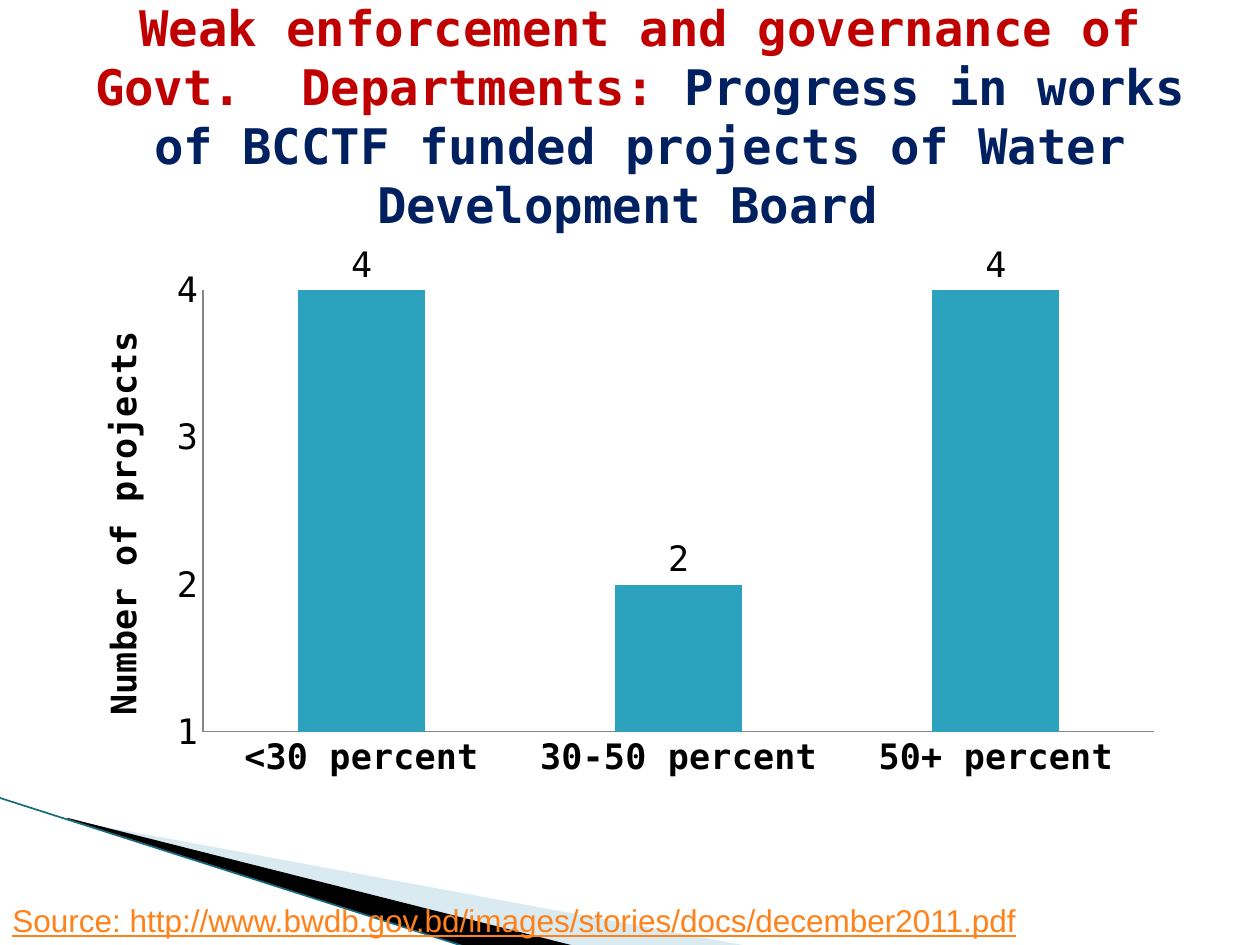
from lxml.etree import SubElement
from pptx import Presentation
from pptx.chart.data import CategoryChartData
from pptx.dml.color import RGBColor
from pptx.enum.chart import XL_CHART_TYPE, XL_LABEL_POSITION, XL_TICK_MARK
from pptx.enum.shapes import MSO_CONNECTOR
from pptx.enum.text import MSO_ANCHOR, PP_ALIGN
from pptx.oxml import parse_xml
from pptx.oxml.ns import nsdecls, qn
from pptx.util import Inches, Pt

RED = RGBColor(0xC0, 0x00, 0x00)
NAVY = RGBColor(0x00, 0x20, 0x60)
TEAL = RGBColor(0x2D, 0xA2, 0xBF)
DARK_TEAL = RGBColor(0x16, 0x69, 0x7F)
PALE_BLUE = RGBColor(0xA0, 0xCB, 0xDC)
ORANGE = RGBColor(0xFF, 0x81, 0x19)
GRAY = RGBColor(0x86, 0x86, 0x86)
BLACK = RGBColor(0, 0, 0)
MONO = "DejaVu Sans Mono"

TITLE = [
    ("Weak enforcement and governance of Govt.  Departments: ", 28, RED),
    ("Progress in works of BCCTF funded projects of Water Development Board", 28, NAVY),
    (" ", 24, NAVY),
]
PROGRESS = {"<30 percent": 4, "30-50 percent": 2, "50+ percent": 4}
AXIS_TITLE = "Number of projects"
SOURCE = "Source: http://www.bwdb.gov.bd/images/stories/docs/december2011.pdf"
# outline, fill, opacity in percent
WEDGES = [
    ([(0.55, 6.51), (5.95, 7.51), (4.56, 7.51), (0.55, 6.5)], PALE_BLUE, 40),
    ([(0.53, 6.49), (4.57, 7.51), (3.72, 7.52), (0.54, 6.5)], BLACK, 100),
]
PLOT_AREA = {"x": 0.118, "y": 0.084, "w": 0.863, "h": 0.765}


def add_wedge(slide, points, color, opacity):
    corners = [(Inches(x), Inches(y)) for x, y in points]
    builder = slide.shapes.build_freeform(*corners[0], scale=1.0)
    builder.add_line_segments(corners[1:], close=True)
    wedge = builder.convert_to_shape()
    wedge.shadow.inherit = False
    wedge.line.fill.background()
    wedge.fill.solid()
    wedge.fill.fore_color.rgb = color
    if opacity < 100:
        tint = wedge.fill._xPr.find(".//" + qn("a:srgbClr"))
        SubElement(tint, qn("a:alpha"), val=str(opacity * 1000))


def add_edge(slide):
    edge = slide.shapes.add_connector(
        MSO_CONNECTOR.STRAIGHT, Inches(-0.01), Inches(6.33), Inches(3.71), Inches(7.52))
    edge.line.color.rgb = DARK_TEAL
    edge.line.width = Pt(0.95)
    SubElement(edge._element.spPr, qn("a:effectLst"))


def fill_title(title):
    title.left, title.top, title.width, title.height = map(Inches, (0.58, 0, 9, 1.83))
    frame = title.text_frame
    frame.word_wrap = True
    frame.vertical_anchor = MSO_ANCHOR.MIDDLE
    paragraph = frame.paragraphs[0]
    paragraph.alignment = PP_ALIGN.CENTER
    paragraph.line_spacing = 1.0
    paragraph.font.name = MONO
    paragraph.font.bold = True
    for text, size, color in TITLE:
        run = paragraph.add_run()
        run.text = text
        run.font.size = Pt(size)
        run.font.color.rgb = color


def fix_plot_area(chart):
    """Pin the inner plot area to fixed fractions of the chart."""
    plot_area = chart._chartSpace.chart.plotArea
    for layout in plot_area.findall(qn("c:layout")):
        plot_area.remove(layout)
    places = "".join(f'<c:{side} val="{part}"/>' for side, part in PLOT_AREA.items())
    plot_area.insert(0, parse_xml(
        f'<c:layout {nsdecls("c")}><c:manualLayout><c:layoutTarget val="inner"/>'
        f'<c:xMode val="edge"/><c:yMode val="edge"/>{places}</c:manualLayout></c:layout>'))


def add_progress_chart(slide):
    progress = CategoryChartData()
    progress.categories = list(PROGRESS)
    progress.add_series("Series 1", list(PROGRESS.values()))
    chart = slide.shapes.add_chart(
        XL_CHART_TYPE.COLUMN_CLUSTERED,
        Inches(0.58), Inches(1.92), Inches(8.75), Inches(4.58), progress).chart
    chart.has_legend = False
    chart.has_title = False
    chart.font.name = MONO
    chart.font.size = Pt(20)
    chart.font.color.rgb = BLACK

    for axis in (chart.category_axis, chart.value_axis):
        axis.has_major_gridlines = False
        axis.major_tick_mark = axis.minor_tick_mark = XL_TICK_MARK.NONE
        axis.format.line.color.rgb = GRAY
        axis.format.line.width = Pt(0.75)
    chart.category_axis.tick_labels.font.bold = True

    counts = chart.value_axis
    counts.minimum_scale, counts.maximum_scale, counts.major_unit = 1, 4, 1
    heading = counts.axis_title.text_frame
    heading.text = AXIS_TITLE
    font = heading.paragraphs[0].font
    font.name, font.size, font.bold = MONO, Pt(20), True
    font.color.rgb = BLACK

    plot = chart.plots[0]
    plot.gap_width = 150
    plot.vary_by_categories = False
    bars = plot.series[0]
    bars.format.fill.solid()
    bars.format.fill.fore_color.rgb = TEAL
    bars.data_labels.show_value = True
    bars.data_labels.position = XL_LABEL_POSITION.OUTSIDE_END
    fix_plot_area(chart)


def add_source(slide):
    frame = slide.shapes.add_textbox(
        Inches(0), Inches(7.1), Inches(8.5), Inches(0.4)).text_frame
    frame.word_wrap = True
    paragraph = frame.paragraphs[0]
    paragraph.text = SOURCE
    font = paragraph.font
    font.name, font.size, font.underline = "Arial", Pt(18), True
    font.color.rgb = ORANGE


def main():
    deck = Presentation()
    deck.slide_width, deck.slide_height = Inches(10), Inches(7.5)
    slide = deck.slides.add_slide(deck.slide_layouts[5])
    for wedge in WEDGES:
        add_wedge(slide, *wedge)
    add_edge(slide)
    fill_title(slide.shapes.title)
    add_progress_chart(slide)
    add_source(slide)
    deck.save("out.pptx")


if __name__ == "__main__":
    main()
